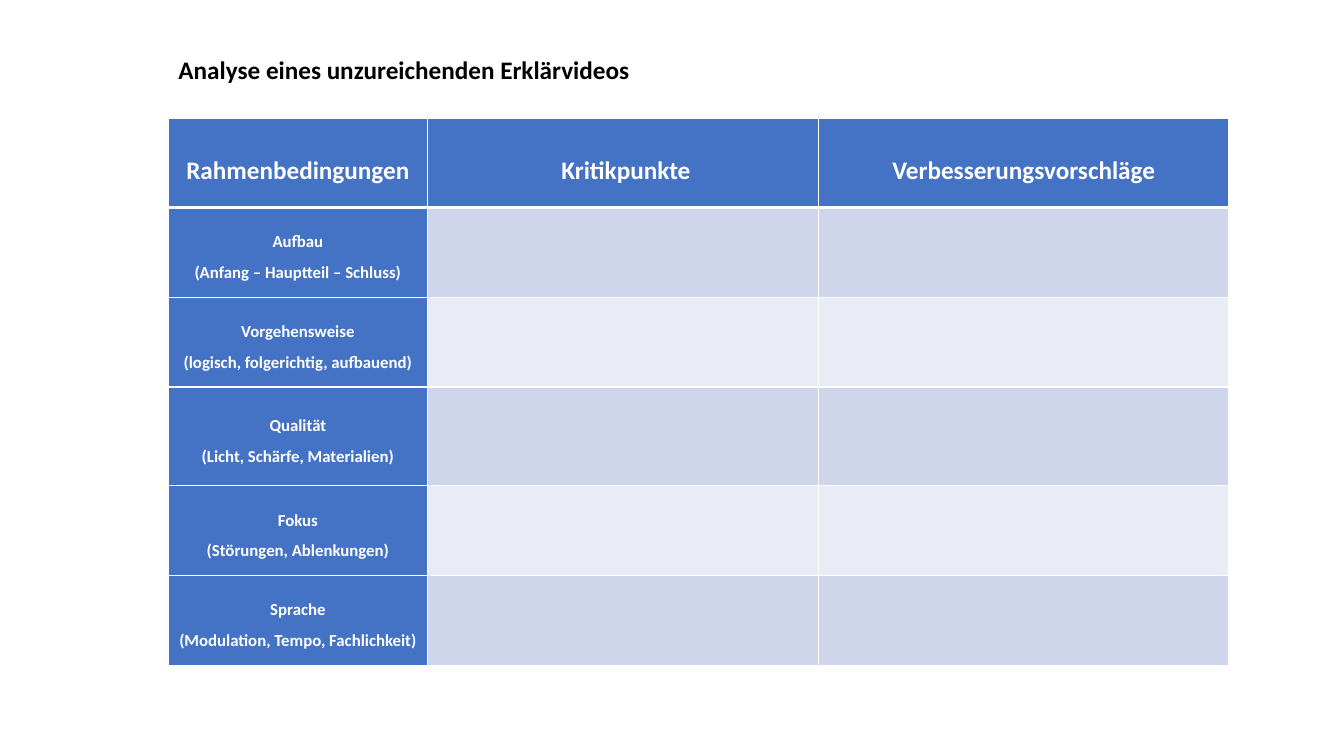
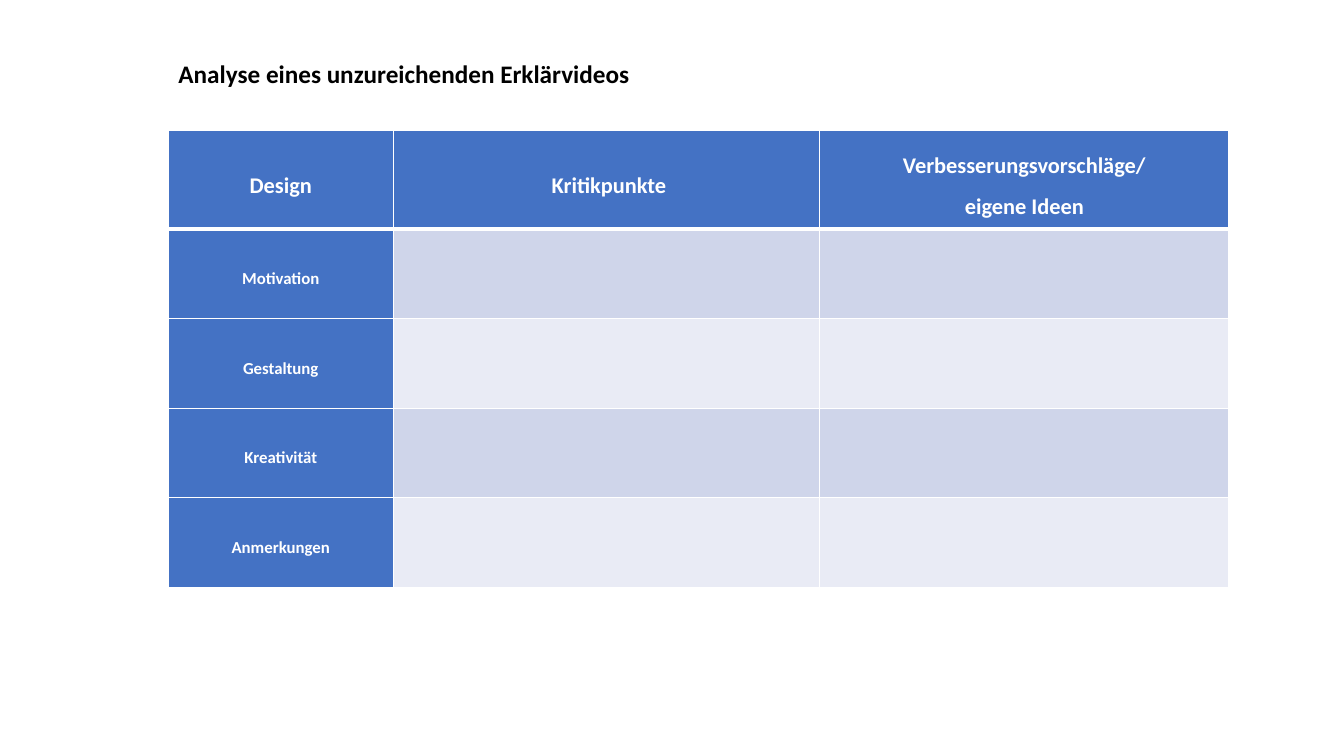
from dataclasses import dataclass

from lxml import etree
from pptx import Presentation
from pptx.dml.color import RGBColor
from pptx.enum import text
from pptx.oxml import ns
from pptx.util import Inches, Pt


@dataclass(frozen=True)
class Theme:
    font: str = "Calibri"
    ink: str = "000000"
    white: str = "FFFFFF"
    accent: str = "4472C4"
    bands: tuple = ("CFD5EA", "E9EBF5")
    title_size: int = 18
    label_size: int = 12
    thin: int = 1
    thick: int = 3


THEME = Theme()
LEFT, TITLE_WIDTH, TITLE_HEIGHT = 1.67, 10, 0.62
TITLE = "Analyse eines unzureichenden Erklärvideos"

# Each table cell with text is a list of paragraphs.
SLIDES = [
    {
        "title_top": 0.27,
        "table_top": 1.17,
        "columns": [2.57, 3.88, 4.07],
        "rows": [0.89, 0.89, 0.89, 0.98, 0.89, 0.89],
        "header_size": 18,
        "header": [["Rahmenbedingungen"], [" Kritikpunkte"], ["Verbesserungsvorschläge"]],
        "labels": [
            ["Aufbau", "(Anfang – Hauptteil – Schluss)"],
            ["Vorgehensweise", "(logisch, folgerichtig, aufbauend)"],
            ["Qualität", "(Licht, Schärfe, Materialien)"],
            ["Fokus", "(Störungen, Ablenkungen)"],
            ["Sprache", "(Modulation, Tempo, Fachlichkeit)"],
        ],
    },
    {
        "title_top": 0.31,
        "table_top": 1.29,
        "columns": [2.23, 4.23, 4.06],
        "rows": [0.98, 0.89, 0.89, 0.89, 0.89],
        "header_size": 16,
        "header": [["Design"], [" Kritikpunkte"], ["Verbesserungsvorschläge/", "eigene Ideen"]],
        "labels": [["Motivation"], ["Gestaltung"], ["Kreativität"], ["Anmerkungen"]],
    },
]


def write(tf, lines, size, color, align, spacing):
    for i, line in enumerate(lines):
        p = tf.add_paragraph() if i else tf.paragraphs[0]
        p.alignment, p.line_spacing = align, spacing
        r = p.add_run()
        r.text = line
        r.font.name, r.font.size, r.font.bold = THEME.font, Pt(size), True
        r.font.color.rgb = RGBColor.from_string(color)


def add_title(s, top):
    title = s.shapes.title
    title.left, title.top = Inches(LEFT), Inches(top)
    title.width, title.height = Inches(TITLE_WIDTH), Inches(TITLE_HEIGHT)
    tf = title.text_frame
    tf.vertical_anchor = text.MSO_ANCHOR.BOTTOM
    write(tf, [TITLE], THEME.title_size, THEME.ink, text.PP_ALIGN.LEFT, 0.9)


def set_borders(cell, row):
    """Draw thin white borders, with a thick one under the header row."""
    thick_side = {0: "lnB", 1: "lnT"}.get(row)
    tc_pr = cell._tc.get_or_add_tcPr()
    for side in ("lnL", "lnR", "lnT", "lnB"):
        width = THEME.thick if side == thick_side else THEME.thin
        ln = etree.SubElement(tc_pr, ns.qn("a:" + side), w=str(Pt(width)))
        fill = etree.SubElement(ln, ns.qn("a:solidFill"))
        etree.SubElement(fill, ns.qn("a:srgbClr"), val=THEME.white)


def style_cell(cell, row, color):
    set_borders(cell, row)
    cell.fill.solid()
    cell.fill.fore_color.rgb = RGBColor.from_string(color)
    cell.vertical_anchor = text.MSO_ANCHOR.MIDDLE
    cell.margin_left = cell.margin_right = Inches(0.07)
    cell.margin_top = cell.margin_bottom = Inches(0)


def add_analysis_table(s, content):
    columns, rows = content["columns"], content["rows"]
    table = s.shapes.add_table(
        len(rows), len(columns), Inches(LEFT), Inches(content["table_top"]),
        Inches(sum(columns)), Inches(sum(rows))).table
    table.horz_banding = False
    for column, width in zip(table.columns, columns):
        column.width = Inches(width)
    for row, height in zip(table.rows, rows):
        row.height = Inches(height)

    grid = [content["header"]] + [[label, [], []] for label in content["labels"]]
    for i, row in enumerate(grid):
        size = THEME.label_size if i else content["header_size"]
        for j, lines in enumerate(row):
            cell = table.cell(i, j)
            style_cell(cell, i, THEME.bands[(i - 1) % 2] if i and j else THEME.accent)
            write(cell.text_frame, lines, size, THEME.white, text.PP_ALIGN.CENTER, 1.5)


def main():
    prs = Presentation()
    prs.slide_width, prs.slide_height = Inches(13.33), Inches(7.5)
    title_only = prs.slide_layouts[5]
    for content in SLIDES:
        s = prs.slides.add_slide(title_only)
        add_title(s, content["title_top"])
        add_analysis_table(s, content)
    prs.save("out.pptx")


if __name__ == "__main__":
    main()
